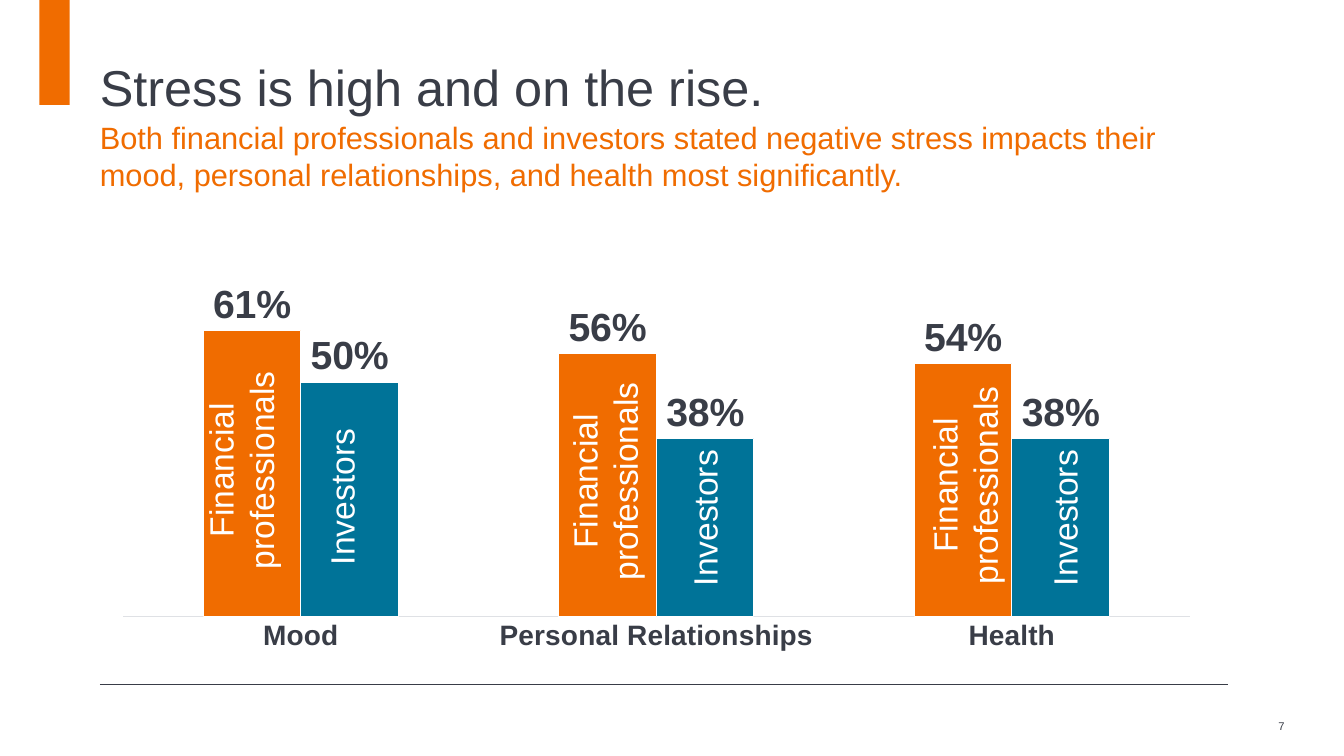
from dataclasses import dataclass

from lxml.etree import fromstring
from pptx import Presentation
from pptx.chart.data import CategoryChartData
from pptx.dml.color import RGBColor
from pptx.enum.chart import XL_CHART_TYPE, XL_LABEL_POSITION, XL_TICK_MARK
from pptx.enum.shapes import MSO_CONNECTOR, MSO_SHAPE
from pptx.enum.text import MSO_ANCHOR, PP_ALIGN
from pptx.oxml.ns import nsdecls, qn
from pptx.util import Pt

# Content
TITLE = "Stress is high and on the rise."
SUBTITLE = ("Both financial professionals and investors stated negative stress impacts "
            "their mood, personal relationships, and health most significantly.")
PAGE_NUMBER = "7"
CATEGORIES = ["Mood", "Personal Relationships", "Health"]
PROFESSIONALS = [0.61, 0.56, 0.54]
INVESTORS = [0.50, 0.38, 0.38]

# Bar captions: text, box size, centre of each box in px
CAPTIONS = [
    ("Financial professionals", (230, 91), [(239, 466), (600, 477), (957, 481)]),
    ("Investors", (181, 50), [(338, 493), (698, 514), (1055, 514)]),
]

# Geometry in px, 100 px to the inch
PX = 9144
SLIDE = (1333, 750)
MARKER = (39, 0, 30, 104)
TITLE_BOX = (99, 45, 1119, 71)
SUBTITLE_BOX = (99, 118, 1119, 88)
CHART_BOX = (100, 277, 1102, 378)
PLOT_BOX = (122, 286, 1058, 326)
RULE = (99, 679, 1218, 679)
NUMBER_BOX = (1223, 700, 51, 40)


@dataclass(frozen=True)
class Theme:
    font: str = "Arial"
    ink: RGBColor = RGBColor(0x39, 0x3D, 0x47)
    orange: RGBColor = RGBColor(0xF0, 0x6C, 0x00)
    teal: RGBColor = RGBColor(0x00, 0x73, 0x98)
    white: RGBColor = RGBColor(0xFF, 0xFF, 0xFF)
    axis: RGBColor = RGBColor(0xDF, 0xE1, 0xE5)
    title: int = 36
    subtitle: int = 22
    value: int = 28
    caption: int = 24
    category: int = 20
    chart: int = 10
    number: int = 8


THEME = Theme()


def emu(lengths):
    return [length * PX for length in lengths]


def style(font, size, color, bold=False):
    font.name, font.size, font.bold = THEME.font, Pt(size), bold
    font.color.rgb = color


def add_text(page, bounds, text, size, color, align=PP_ALIGN.LEFT,
             anchor=MSO_ANCHOR.TOP, inset=0):
    box = page.shapes.add_textbox(*emu(bounds))
    frame = box.text_frame
    frame.word_wrap = True
    frame.vertical_anchor = anchor
    frame.margin_left = frame.margin_right = inset * PX
    frame.margin_top = frame.margin_bottom = inset * PX // 2
    para = frame.paragraphs[0]
    para.alignment = align
    span = para.add_run()
    span.text = text
    style(span.font, size, color)
    return box


def add_frame(page):
    marker = page.shapes.add_shape(MSO_SHAPE.RECTANGLE, *emu(MARKER))
    marker.shadow.inherit = False
    marker.fill.solid()
    marker.fill.fore_color.rgb = THEME.orange
    marker.line.fill.background()

    rule = page.shapes.add_connector(MSO_CONNECTOR.STRAIGHT, *emu(RULE))
    rule.line.color.rgb = THEME.ink
    rule.line.width = Pt(0.5)
    properties = rule._element.spPr
    properties.append(properties.makeelement(qn("a:effectLst")))

    add_text(page, NUMBER_BOX, PAGE_NUMBER, THEME.number, THEME.ink,
             PP_ALIGN.RIGHT, MSO_ANCHOR.MIDDLE)


def place_plot(chart):
    """Pin the inner plot area, as fractions of the chart box."""
    left, top, width, height = CHART_BOX
    x, y, w, h = PLOT_BOX
    fractions = {"x": (x - left) / width, "y": (y - top) / height,
                 "w": w / width, "h": h / height}
    parts = "".join(f'<c:{key} val="{value:.3f}"/>' for key, value in fractions.items())
    layout = fromstring(
        f'<c:layout {nsdecls("c")}><c:manualLayout><c:layoutTarget val="inner"/>'
        f'<c:xMode val="edge"/><c:yMode val="edge"/>{parts}</c:manualLayout></c:layout>')
    area = chart._chartSpace.chart.plotArea
    for old in area.findall(qn("c:layout")):
        area.remove(old)
    area.insert(0, layout)


def add_bars(page):
    data = CategoryChartData(number_format="0%")
    data.categories = CATEGORIES
    data.add_series("Financial professionals", PROFESSIONALS)
    data.add_series("Investors", INVESTORS)
    chart = page.shapes.add_chart(
        XL_CHART_TYPE.COLUMN_CLUSTERED, *emu(CHART_BOX), data).chart
    chart.has_legend = chart.has_title = False
    style(chart.font, THEME.chart, THEME.ink)
    place_plot(chart)

    # Axes
    values = chart.value_axis
    values.minimum_scale, values.maximum_scale = 0, 0.7
    values.has_major_gridlines = False
    values.visible = False
    names = chart.category_axis
    names.major_tick_mark = XL_TICK_MARK.NONE
    names.format.line.color.rgb = THEME.axis
    names.format.line.width = Pt(0.75)
    style(names.tick_labels.font, THEME.category, THEME.ink, bold=True)

    # Columns and value labels
    plot = chart.plots[0]
    plot.vary_by_categories = False
    plot.gap_width, plot.overlap = 164, 0
    for series, color in zip(plot.series, (THEME.orange, THEME.teal)):
        series.format.fill.solid()
        series.format.fill.fore_color.rgb = color
        series.format.line.color.rgb = THEME.white
        series.format.line.width = Pt(0.75)
        labels = series.data_labels
        labels.show_value = True
        labels.number_format, labels.number_format_is_linked = "0%", False
        labels.position = XL_LABEL_POSITION.OUTSIDE_END
        style(labels.font, THEME.value, THEME.ink, bold=True)


def add_captions(page):
    for text, (width, height), centres in CAPTIONS:
        for x, y in centres:
            bounds = (x - width // 2, y - height // 2, width, height)
            box = add_text(page, bounds, text, THEME.caption, THEME.white,
                           PP_ALIGN.CENTER, inset=10)
            box.rotation = 270


def main():
    deck = Presentation()
    deck.slide_width, deck.slide_height = emu(SLIDE)
    page = deck.slides.add_slide(deck.slide_layouts[6])
    add_frame(page)
    add_text(page, TITLE_BOX, TITLE, THEME.title, THEME.ink, anchor=MSO_ANCHOR.BOTTOM)
    add_text(page, SUBTITLE_BOX, SUBTITLE, THEME.subtitle, THEME.orange)
    add_bars(page)
    add_captions(page)
    deck.save("out.pptx")


if __name__ == "__main__":
    main()
